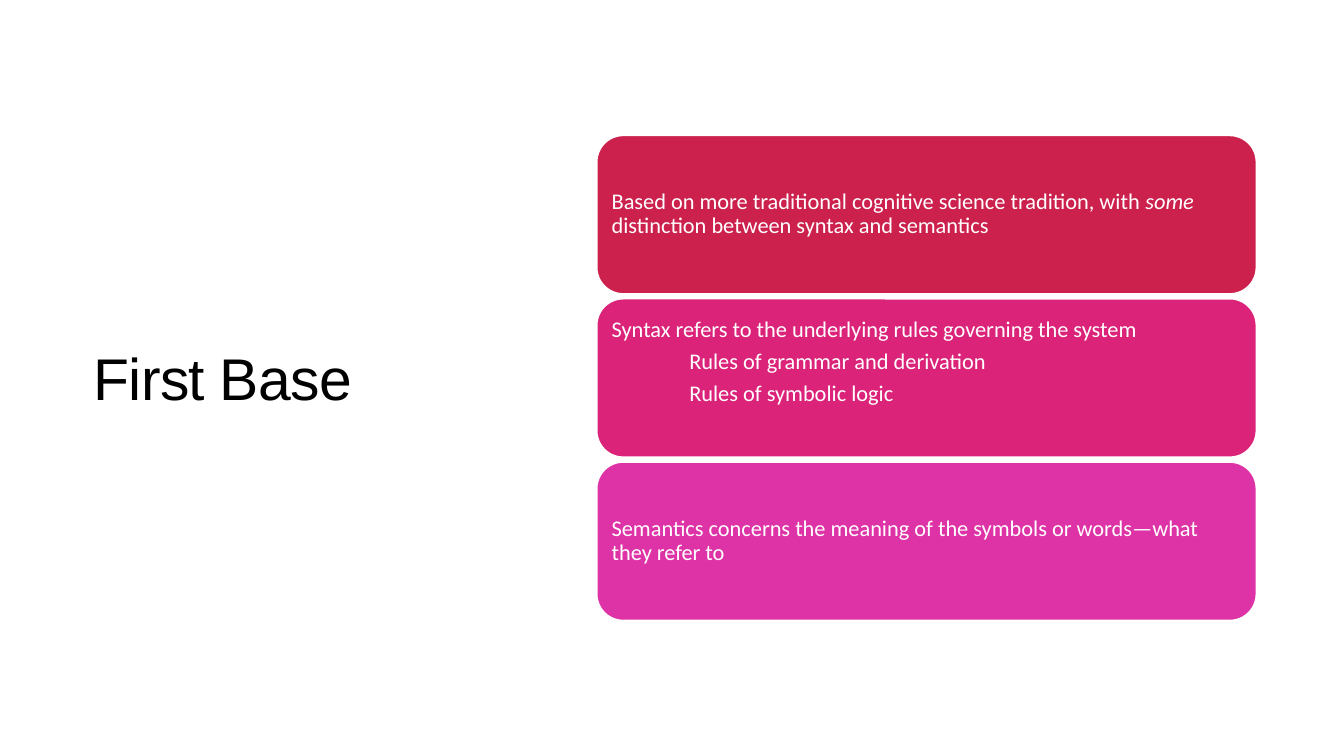
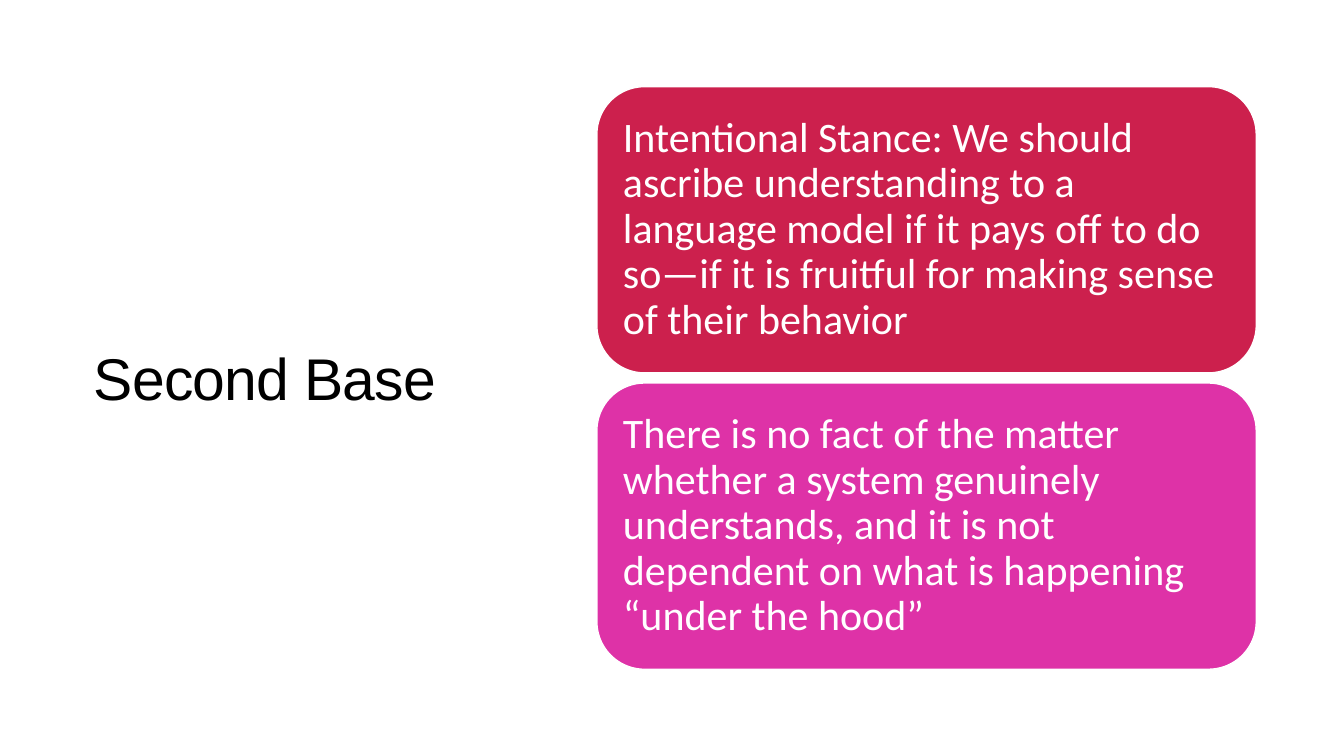
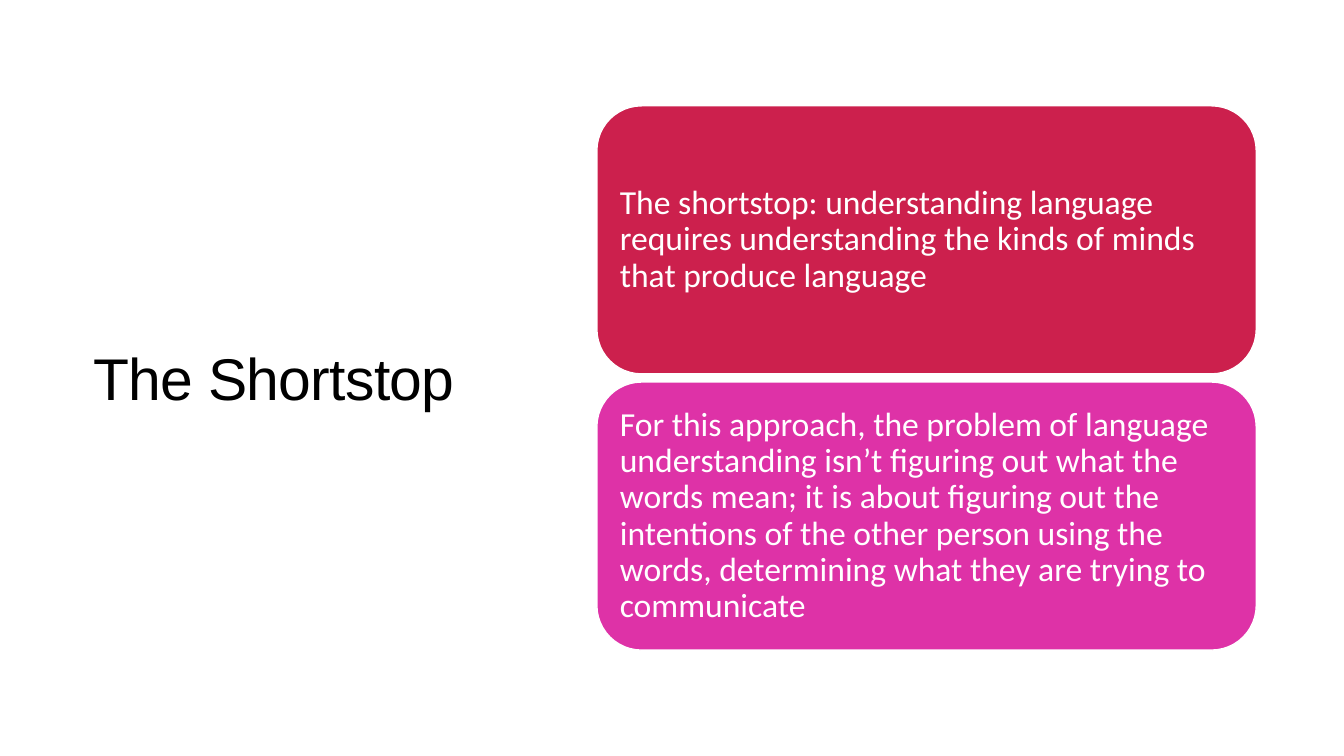
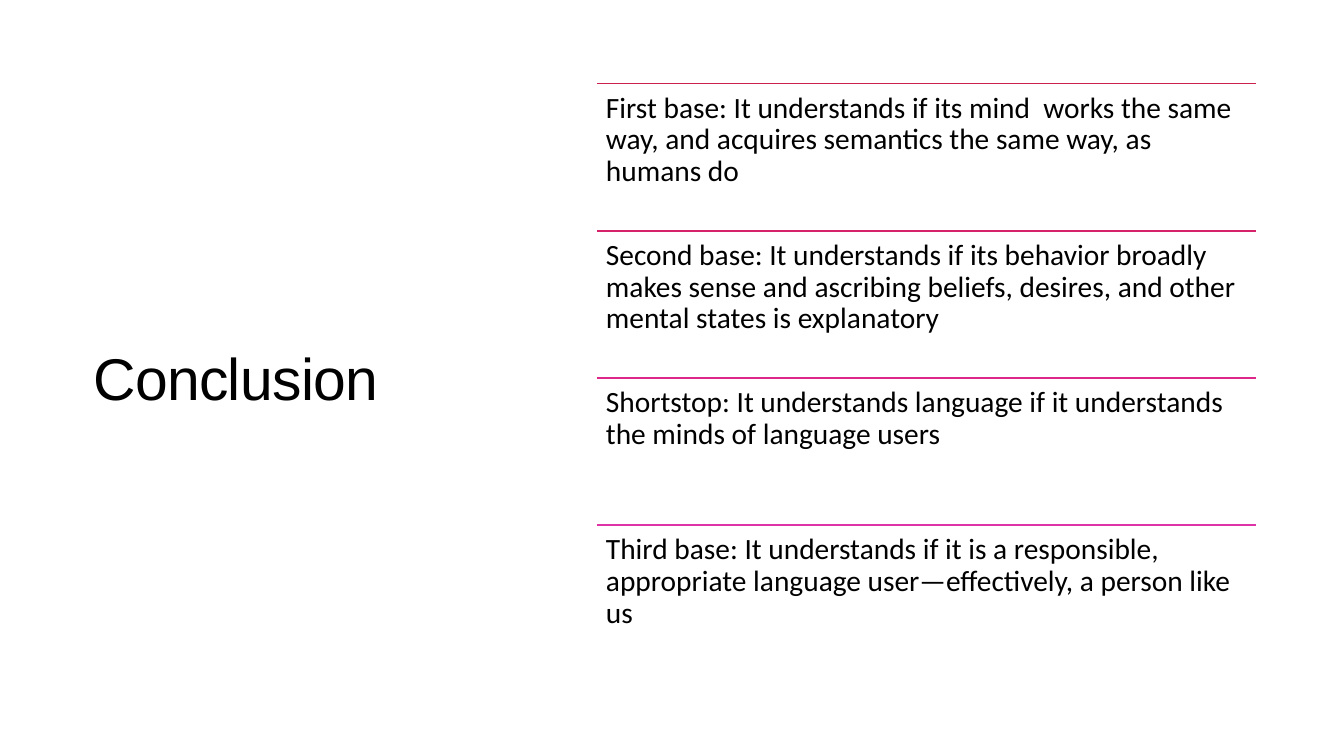
from lxml import etree
from pptx import Presentation
from pptx.dml.color import RGBColor
from pptx.enum import shapes, text
from pptx.oxml import ns
from pptx.util import Inches, Pt

WHITE = RGBColor(0xFF, 0xFF, 0xFF)
BLACK = RGBColor(0x00, 0x00, 0x00)
CRIMSON = RGBColor(0xCC, 0x20, 0x4D)
ROSE = RGBColor(0xDB, 0x23, 0x7A)
ORCHID = RGBColor(0xDE, 0x32, 0xA7)
RULE_COLORS = [CRIMSON, RGBColor(0xD6, 0x22, 0x6A), RGBColor(0xDD, 0x27, 0x89), ORCHID]

LEFT, WIDTH, MIDDLE = 5.92, 6.54, 3.75  # content column
POINT_INDENT = 0.77

TITLE = {"name": "Arial", "size": Pt(42), "color": BLACK}
MIDDLE_ANCHOR = text.MSO_ANCHOR.MIDDLE

prs = Presentation()
prs.slide_width, prs.slide_height = Inches(13.33), Inches(7.5)


def write(tf, paragraphs, font, spacing, inset, anchor):
    """Fill a frame; every second run is italic, later paragraphs are indented."""
    frame = {"word_wrap": True, "vertical_anchor": anchor}
    for side in ("left", "right", "top", "bottom"):
        frame[f"margin_{side}"] = Inches(inset)
    for key, value in frame.items():
        setattr(tf, key, value)
    for i, runs in enumerate(paragraphs):
        p = tf.add_paragraph() if i else tf.paragraphs[0]
        p.alignment = text.PP_ALIGN.LEFT
        p.line_spacing = spacing
        if i < len(paragraphs) - 1:
            p.space_after = Pt(5.6)
        if i:
            p._p.get_or_add_pPr().set("marL", str(Inches(POINT_INDENT)))
        for j, words in enumerate(runs):
            r = p.add_run()
            r.text = words
            r.font.name, r.font.size = font["name"], font["size"]
            r.font.color.rgb = font["color"]
            r.font.italic = j % 2 == 1


def add_titled_slide(title):
    s = prs.slides.add_slide(prs.slide_layouts[6])
    sp = s.shapes.add_textbox(Inches(0.83), Inches(0.85), Inches(4.27), Inches(5.84))
    write(sp.text_frame, [[title]], TITLE, 0.95, 0.1, MIDDLE_ANCHOR)
    r = sp.text_frame.paragraphs[0].runs[0]
    r.font._element.set("spc", "-50")
    return s


# Slides with stacked cards: title, card height, gap, text size, inset, cards
card_slides = [
    ("First Base", 1.57, 0.05, 16, 0.07, [
        (CRIMSON, [["Based on more traditional cognitive science tradition, with ", "some ",
                    "distinction between syntax and semantics"]]),
        (ROSE, [["Syntax refers to the underlying rules governing the system"],
                ["Rules of grammar and derivation"],
                ["Rules of symbolic logic"]]),
        (ORCHID, [["Semantics concerns the meaning of the symbols or words—what they refer to"]]),
    ]),
    ("Second Base", 2.84, 0.1, 30, 0.12, [
        (CRIMSON, [["Intentional Stance: We should ascribe understanding to a language model if it "
                    "pays off to do so—if it is fruitful for making sense of their behavior"]]),
        (ORCHID, [["There is no fact of the matter whether a system genuinely understands, and it is "
                   "not dependent on what is happening “under the hood”"]]),
    ]),
    ("The Shortstop", 2.66, 0.08, 24, 0.1, [
        (CRIMSON, [["The shortstop: understanding language requires understanding the kinds of minds "
                    "that produce language"]]),
        (ORCHID, [["For this approach, the problem of language understanding isn’t figuring out what "
                   "the words mean; it is about figuring out the intentions of the other person using "
                   "the words, determining what they are trying to communicate"]]),
    ]),
]

for title, height, gap, size, inset, cards in card_slides:
    s = add_titled_slide(title)
    font = {"name": "Calibri", "size": Pt(size), "color": WHITE}
    step = height + gap
    top = MIDDLE - (len(cards) * step - gap) / 2
    for i, (color, paragraphs) in enumerate(cards):
        sp = s.shapes.add_shape(shapes.MSO_SHAPE.ROUNDED_RECTANGLE, Inches(LEFT),
                                Inches(top + i * step), Inches(WIDTH), Inches(height))
        sp.shadow.inherit = False
        sp.fill.solid()
        sp.fill.fore_color.rgb = color
        sp.line.color.rgb = WHITE
        sp.line.width = Pt(1)
        write(sp.text_frame, paragraphs, font, 0.9, inset, MIDDLE_ANCHOR)
        if len(paragraphs) > 1:  # a list sits one line higher
            sp.text_frame.margin_bottom = Inches(inset + 0.32)

# Conclusion: ruled rows
conclusions = [
    "First base: It understands if its mind  works the same way, and acquires semantics the same way, "
    "as humans do",
    "Second base: It understands if its behavior broadly makes sense and ascribing beliefs, desires, "
    "and other mental states is explanatory",
    "Shortstop: It understands language if it understands the minds of language users",
    "Third base: It understands if it is a responsible, appropriate language user—effectively, a person "
    "like us",
]
ROW_TOP, ROW_HEIGHT = 0.83, 1.46
ROW_FONT = {"name": "Calibri", "size": Pt(21), "color": BLACK}

s = add_titled_slide("Conclusion")
for i, (color, words) in enumerate(zip(RULE_COLORS, conclusions)):
    y = Inches(ROW_TOP + i * ROW_HEIGHT)
    rule = s.shapes.add_connector(shapes.MSO_CONNECTOR.STRAIGHT, Inches(LEFT), y,
                                  Inches(LEFT + WIDTH), y)
    rule.line.color.rgb = color
    rule.line.width = Pt(1)
    etree.SubElement(rule._element.spPr, ns.qn("a:effectLst"))
    sp = s.shapes.add_textbox(Inches(LEFT), y, Inches(WIDTH), Inches(ROW_HEIGHT))
    write(sp.text_frame, [[words]], ROW_FONT, 0.9, 0.09, text.MSO_ANCHOR.TOP)

prs.save("out.pptx")
